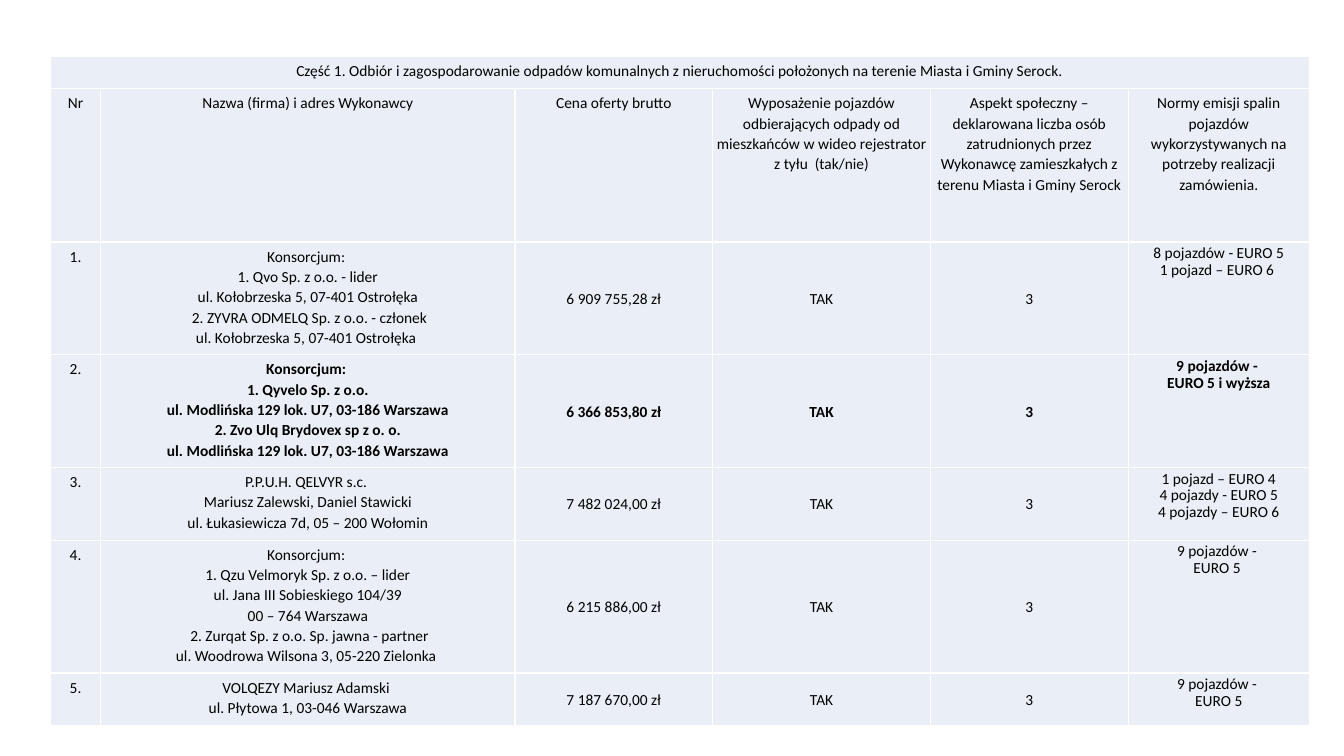
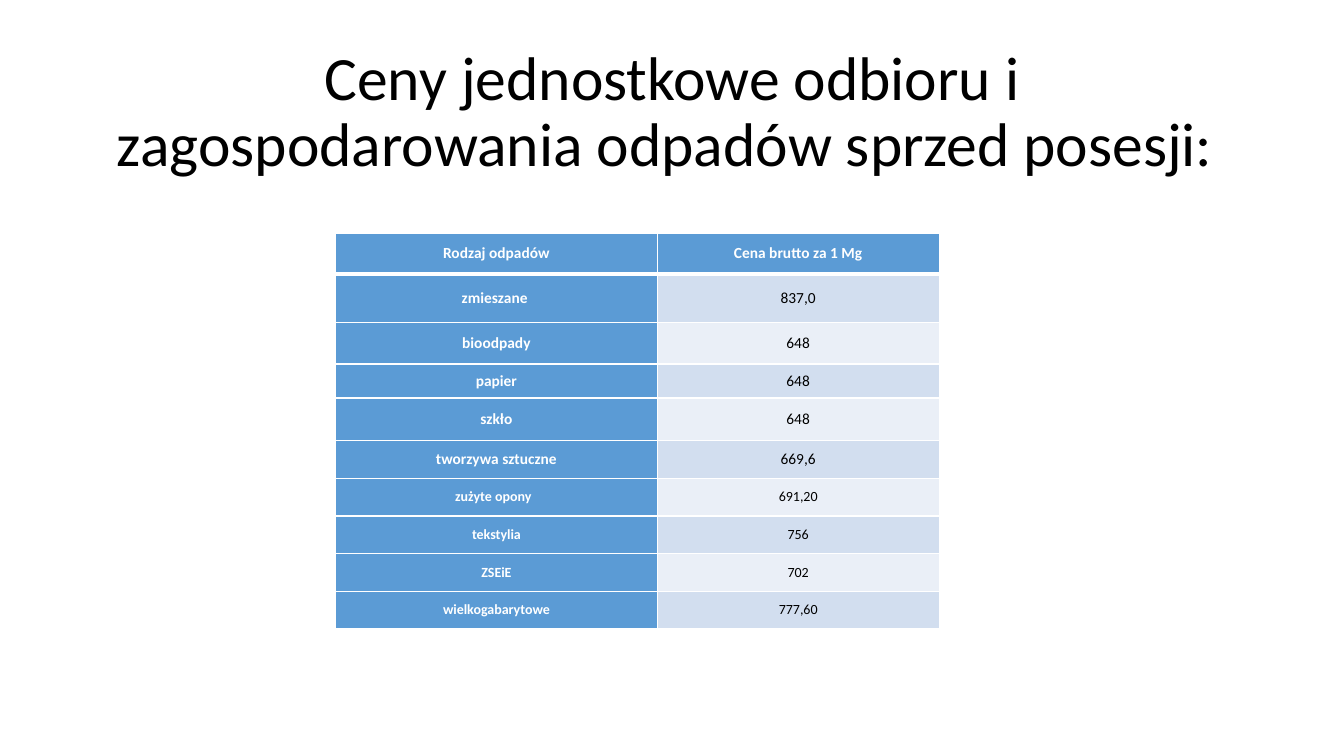
import pptx
import pptx.dml.color
import pptx.enum.text
import pptx.oxml
import pptx.util
from pptx.util import Cm

COLORS = {"text": "000000", "white": "FFFFFF", "blue": "5B9BD5",
          "band": "D2DEEF", "pale": "EAEFF7"}
FONT = "Calibri"
TOP = pptx.enum.text.MSO_ANCHOR.TOP
MIDDLE = pptx.enum.text.MSO_ANCHOR.MIDDLE
CENTER = pptx.enum.text.PP_ALIGN.CENTER
A_NS = "http://schemas.openxmlformats.org/drawingml/2006/main"

OFFERS_TITLE = ("Część 1. Odbiór i zagospodarowanie odpadów komunalnych z nieruchomości "
                "położonych na terenie Miasta i Gminy Serock.")
OFFERS_HEADER = [
    "Nr", "Nazwa (firma) i adres Wykonawcy", "Cena oferty brutto",
    "Wyposażenie pojazdów odbierających odpady od mieszkańców w wideo "
    "rejestrator z tyłu  (tak/nie)",
    "Aspekt społeczny – deklarowana liczba osób zatrudnionych przez Wykonawcę "
    "zamieszkałych z terenu Miasta i Gminy Serock",
    "Normy emisji spalin pojazdów wykorzystywanych na potrzeby realizacji zamówienia.",
]
# Contractor, price, vehicle emission standards
OFFERS = [
    ("Konsorcjum: \n1. Qvo Sp. z o.o. - lider\nul. Kołobrzeska 5, 07-401 Ostrołęka\n"
     " 2. ZYVRA ODMELQ Sp. z o.o. - członek\nul. Kołobrzeska 5, 07-401 Ostrołęka ",
     "6 909 755,28 zł", "8 pojazdów - EURO 5\n1 pojazd – EURO 6 "),
    ("Konsorcjum: \n1. Qyvelo Sp. z o.o.\nul. Modlińska 129 lok. U7, 03-186 Warszawa\n"
     "2. Zvo Ulq Brydovex sp z o. o.\nul. Modlińska 129 lok. U7, 03-186 Warszawa",
     "6 366 853,80 zł", "9 pojazdów - \nEURO 5 i wyższa"),
    ("P.P.U.H. QELVYR s.c. \nMariusz Zalewski, Daniel Stawicki\n"
     "ul. Łukasiewicza 7d, 05 – 200 Wołomin",
     "7 482 024,00 zł", "1 pojazd – EURO 4\n4 pojazdy - EURO 5\n4 pojazdy – EURO 6"),
    ("Konsorcjum: \n1. Qzu Velmoryk Sp. z o.o. – lider\nul. Jana III Sobieskiego 104/39\n"
     "00 – 764 Warszawa\n 2. Zurqat Sp. z o.o. Sp. jawna - partner\n"
     "ul. Woodrowa Wilsona 3, 05-220 Zielonka ",
     "6 215 886,00 zł", "9 pojazdów - \nEURO 5 "),
    ("VOLQEZY Mariusz Adamski \nul. Płytowa 1, 03-046 Warszawa",
     "7 187 670,00 zł", "9 pojazdów - \nEURO 5"),
]
BEST_OFFER = 1

PRICES_TITLE = "Ceny jednostkowe odbioru i zagospodarowania odpadów sprzed posesji: "
PRICES = [
    ("Rodzaj odpadów", "Cena brutto za 1 Mg"),
    ("zmieszane ", "837,0"), ("bioodpady", "648"), ("papier", "648"),
    ("szkło", "648"), ("tworzywa sztuczne", "669,6"), ("zużyte opony  ", "691,20"),
    ("tekstylia", "756"), ("ZSEiE", "702"), ("wielkogabarytowe", "777,60"),
]


def rgb(name):
    return pptx.dml.color.RGBColor.from_string(COLORS[name])


def format_runs(p, size, color, bold=False):
    for r in p.runs:
        r.font.name = FONT
        r.font.size = pptx.util.Pt(size)
        r.font.bold = bold
        r.font.color.rgb = rgb(color)


def set_borders(cell, top=1, bottom=1):
    """White lines on all four sides, widths in points."""
    tc_pr = cell._tc.get_or_add_tcPr()
    for i, (side, width) in enumerate((("L", 1), ("R", 1), ("T", top), ("B", bottom))):
        tc_pr.insert(i, pptx.oxml.parse_xml(
            f'<a:ln{side} xmlns:a="{A_NS}" w="{width * 12700}"><a:solidFill>'
            f'<a:srgbClr val="{COLORS["white"]}"/></a:solidFill></a:ln{side}>'))


def fill_cell(cell, text, fill, margins, size=11, color="text", bold=False,
              anchor=MIDDLE, spacing=None, top=1, bottom=1):
    cell.fill.solid()
    cell.fill.fore_color.rgb = rgb(fill)
    set_borders(cell, top, bottom)
    cell.vertical_anchor = anchor
    cell.margin_left = cell.margin_right = Cm(margins[0])
    cell.margin_top = cell.margin_bottom = Cm(margins[1])
    tf = cell.text_frame
    tf.text = text
    for p in tf.paragraphs:
        p.alignment = CENTER
        if spacing:
            p.line_spacing = spacing
        format_runs(p, size, color, bold)


def add_grid(s, left, top, widths, heights):
    """Table without banding, column widths and row heights in cm."""
    table = s.shapes.add_table(len(heights), len(widths), Cm(left), Cm(top),
                               Cm(sum(widths)), Cm(sum(heights))).table
    table.first_row = table.horz_banding = False
    for column, width in zip(table.columns, widths):
        column.width = Cm(width)
    for row, height in zip(table.rows, heights):
        row.height = Cm(height)
    return table


def add_title(s, text, left, top, width, height):
    title = s.shapes.title
    title.left, title.top, title.width, title.height = map(Cm, (left, top, width, height))
    tf = title.text_frame
    tf.text = text
    tf.word_wrap = True
    tf.auto_size = pptx.enum.text.MSO_AUTO_SIZE.NONE
    tf.vertical_anchor = MIDDLE
    p = tf.paragraphs[0]
    p.alignment = CENTER
    p.line_spacing = 0.9
    format_runs(p, 44, "text")


def add_offers_table(s, left, top):
    table = add_grid(s, left, top, [1.27, 10.44, 4.98, 5.49, 4.98, 4.57],
                     [0.82, 3.86, 2.84, 2.84, 1.83, 3.35, 1.32])
    rows = [[OFFERS_TITLE] + [""] * 5, OFFERS_HEADER]
    for number, (contractor, price, emissions) in enumerate(OFFERS, 1):
        rows.append([f"{number}.", contractor, price, "TAK", "3", emissions])
    for i, row in enumerate(rows):
        offer = i - 2
        for j, text in enumerate(row):
            centred = offer >= 0 and 2 <= j <= 4
            tight = offer >= 0 and j == 5
            fill_cell(table.cell(i, j), text, "pale", (0.1, 0.1),
                      bold=offer == BEST_OFFER and j > 0,
                      anchor=MIDDLE if centred else TOP,
                      spacing=pptx.util.Pt(12) if tight else 1.07)
    table.cell(0, 0).merge(table.cell(0, 5))


def add_prices_table(s, left, top):
    table = add_grid(s, left, top, [8.1, 7.11],
                     [1.04, 1.22, 1.04, 0.86, 1.07] + [0.95] * 5)
    for i, row in enumerate(PRICES):
        for j, text in enumerate(row):
            heading = i == 0 or j == 0
            fill = "blue" if heading else "band" if i % 2 else "pale"
            fill_cell(table.cell(i, j), text, fill, (0.13, 0),
                      size=11 if i < 6 else 10,
                      color="white" if heading else "text", bold=heading,
                      top=3 if i == 1 else 1, bottom=3 if i == 0 else 1)


def main():
    prs = pptx.Presentation()
    prs.slide_width, prs.slide_height = Cm(33.87), Cm(19.05)

    # Offers
    s = prs.slides.add_slide(prs.slide_layouts[6])
    add_offers_table(s, 1.27, 1.42)

    # Unit prices
    s = prs.slides.add_slide(prs.slide_layouts[5])
    add_title(s, PRICES_TITLE, 2.34, 1.02, 29.21, 3.68)
    add_prices_table(s, 8.46, 5.87)

    prs.save("out.pptx")


if __name__ == "__main__":
    main()
